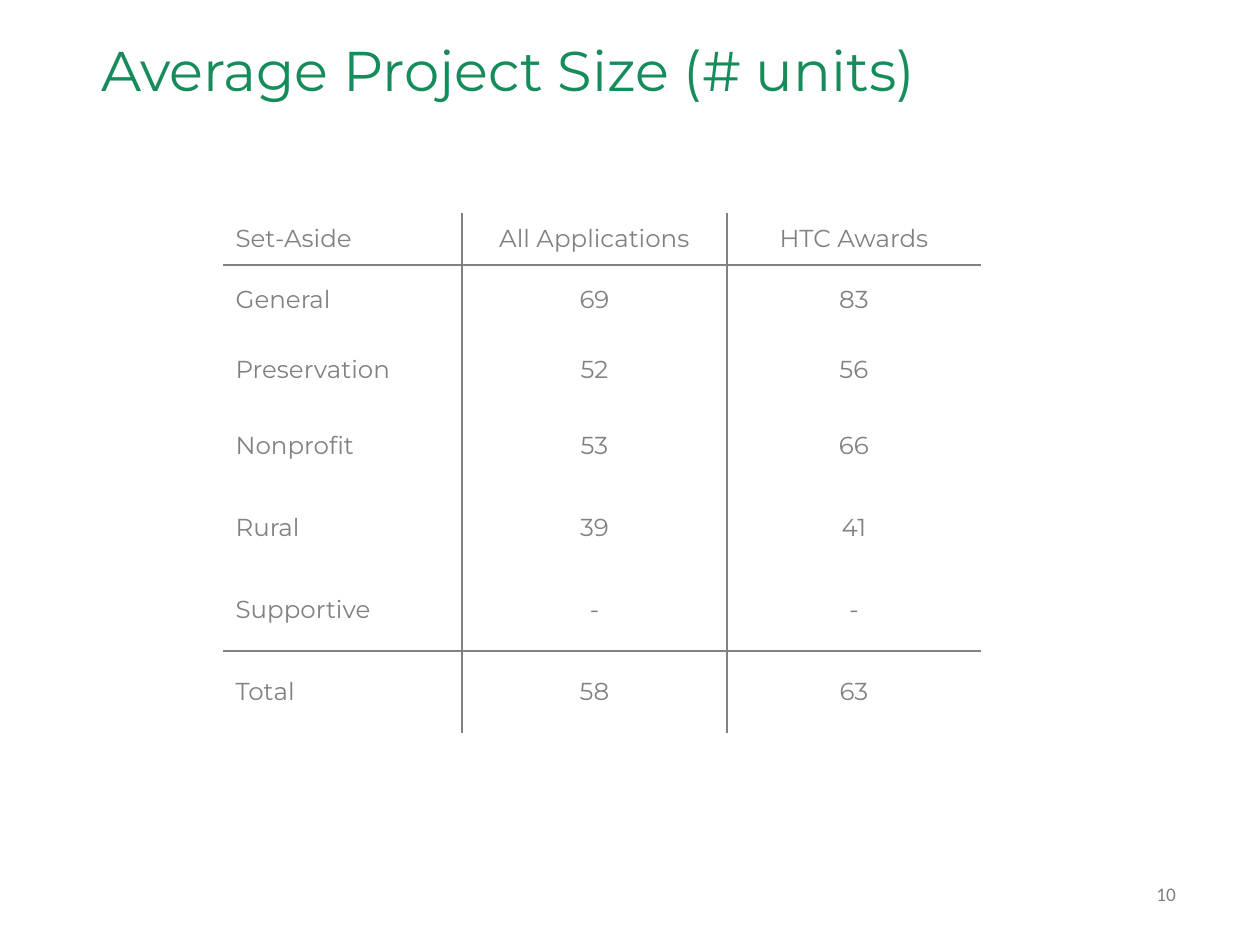
import pptx
import pptx.util
import pptx.dml.color
import pptx.enum.text
import pptx.oxml

HUES = {"green": "158C59", "grey": "808184"}
TITLE = "Average Project Size (# units)"
PAGE = "10"
ROWS = [
    ("Set-Aside", "All Applications", "HTC Awards"),
    ("General", "69", "83"),
    ("Preservation", "52", "56"),
    ("Nonprofit", "53", "66"),
    ("Rural", "39", "41"),
    ("Supportive", "-", "-"),
    ("Total", "58", "63"),
]
WIDTHS = [239, 265, 254]
HEIGHTS = [52, 70, 70, 82, 82, 82, 82]
RULED = {0, len(ROWS) - 2}
PLAIN = "{2D5ABB26-0587-4C30-8999-92F81FD0307C}"
NS = "http://schemas.openxmlformats.org/drawingml/2006/main"
ALIGN = pptx.enum.text.PP_ALIGN
ANCHOR = pptx.enum.text.MSO_ANCHOR


def px(*nums):
    return [round(n * 914400 / 126) for n in nums]


def put(obj, vals):
    for key, val in vals.items():
        setattr(obj, key, val)


def write(frame, text, size, face, hue, align=ALIGN.LEFT):
    frame.text = text
    para = frame.paragraphs[0]
    para.alignment = align
    put(para.runs[0].font, {"size": pptx.util.Pt(size), "name": face, "bold": False})
    para.runs[0].font.color.rgb = pptx.dml.color.RGBColor.from_string(HUES[hue])
    return para


def edge(cell, sides):
    props = cell._tc.get_or_add_tcPr()
    for spot, side in enumerate("LRTB"):
        fill = "<a:noFill/>"
        if side in sides:
            fill = f'<a:solidFill><a:srgbClr val="{HUES["grey"]}"/></a:solidFill>'
        line = f'<a:ln{side} xmlns:a="{NS}" w="12700">{fill}</a:ln{side}>'
        props.insert(spot, pptx.oxml.parse_xml(line))


deck = pptx.Presentation()
put(deck, dict(zip(("slide_width", "slide_height"), px(1260, 945))))
slide = deck.slides.add_slide(deck.slide_layouts[5])

title = slide.shapes.title
put(title, dict(zip(("left", "top", "width", "height"), px(89, 37, 1057, 140))))
para = write(title.text_frame, TITLE, 32, "Montserrat", "green")
para.line_spacing = 0.9
put(title.text_frame, {"vertical_anchor": ANCHOR.TOP, "word_wrap": True,
                       "auto_size": pptx.enum.text.MSO_AUTO_SIZE.NONE})

page = slide.shapes.add_textbox(*px(1144, 876, 48, 37))
write(page.text_frame, PAGE, 11, "Calibri", "grey")
page.text_frame.word_wrap = False

box = px(223, 213, sum(WIDTHS), sum(HEIGHTS))
grid = slide.shapes.add_table(len(ROWS), len(WIDTHS), *box).table
put(grid, {"first_row": False, "horz_banding": False})
grid._tbl.tblPr.find(f"{{{NS}}}tableStyleId").text = PLAIN
for col, wide in zip(grid.columns, px(*WIDTHS)):
    col.width = wide
for row, high in zip(grid.rows, px(*HEIGHTS)):
    row.height = high

for r, row in enumerate(ROWS):
    for c, text in enumerate(row):
        cell = grid.cell(r, c)
        cell.vertical_anchor = ANCHOR.MIDDLE
        cell.fill.background()
        align = ALIGN.CENTER if c else ALIGN.LEFT
        write(cell.text_frame, text, 14, "Montserrat", "grey", align)
        sides = {"L": c > 0, "R": c < len(row) - 1, "T": r - 1 in RULED, "B": r in RULED}
        edge(cell, [side for side, shown in sides.items() if shown])

deck.save("out.pptx")
